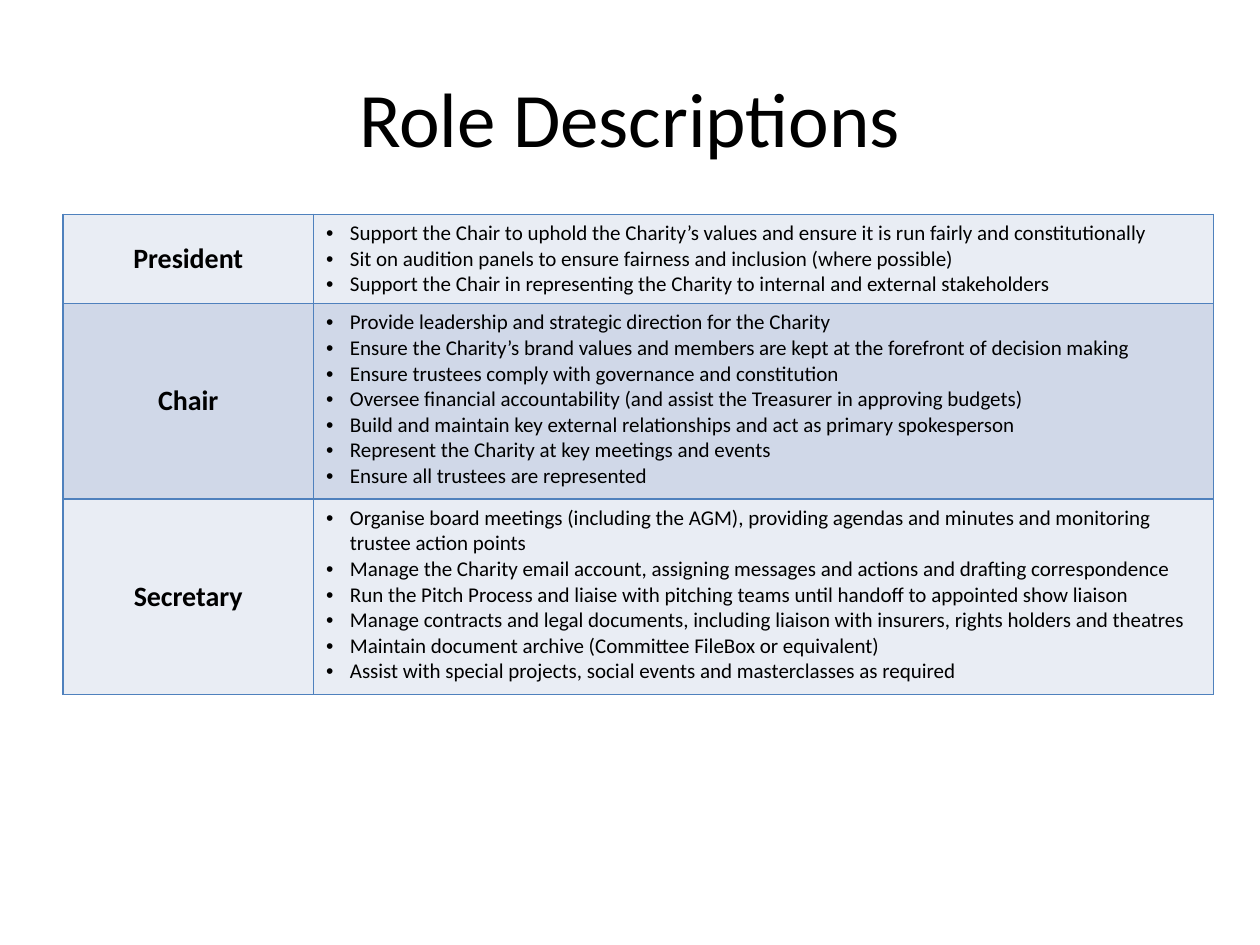
from lxml import etree
from pptx import Presentation
from pptx.dml.color import RGBColor
from pptx.enum.text import MSO_ANCHOR, PP_ALIGN
from pptx.oxml.ns import qn
from pptx.util import Cm, Pt

MIDDLE, TOP = MSO_ANCHOR.MIDDLE, MSO_ANCHOR.TOP
CENTER, LEFT = PP_ALIGN.CENTER, PP_ALIGN.LEFT

COLOURS = {
    "text": "000000",
    "border": "4F81BD",
    "light_band": "E9EDF4",
    "dark_band": "D0D8E8",
}
FORMATS = {
    "title": {"size": Pt(44), "bold": False},
    "role": {"size": Pt(16), "bold": True},
    "duty": {"size": Pt(12), "bold": False},
}
ROLES = [
    ("President", 1.8, [
        "Support the Chair to uphold the Charity’s values and ensure it is run fairly and constitutionally",
        "Sit on audition panels to ensure fairness and inclusion (where possible)",
        "Support the Chair in representing the Charity to internal and external stakeholders",
    ]),
    ("Chair", 3.94, [
        "Provide leadership and strategic direction for the Charity",
        "Ensure the Charity’s brand values and members are kept at the forefront of decision making",
        "Ensure trustees comply with governance and constitution",
        "Oversee financial accountability (and assist the Treasurer in approving budgets)",
        "Build and maintain key external relationships and act as primary spokesperson",
        "Represent the Charity at key meetings and events",
        "Ensure all trustees are represented",
    ]),
    ("Secretary", 3.94, [
        "Organise board meetings (including the AGM), providing agendas and minutes and monitoring "
        "trustee action points",
        "Manage the Charity email account, assigning messages and actions and drafting correspondence",
        "Run the Pitch Process and liaise with pitching teams until handoff to appointed show liaison",
        "Manage contracts and legal documents, including liaison with insurers, rights holders and theatres",
        "Maintain document archive (Committee FileBox or equivalent)",
        "Assist with special projects, social events and masterclasses as required",
    ]),
]


class SlideBuilder:
    """Holds the style and the current slide."""

    font_name = "Calibri"
    border_width = Pt(1)
    bullet_indent = Cm(0.48)

    def __init__(self, slide):
        self.slide = slide

    def add_lines(self, frame, lines, style, align, bulleted=False):
        for index, line in enumerate(lines):
            paragraph = frame.add_paragraph() if index else frame.paragraphs[0]
            paragraph.alignment = align
            run = paragraph.add_run()
            run.text = line
            run.font.name = self.font_name
            run.font.color.rgb = RGBColor.from_string(COLOURS["text"])
            for attribute, value in FORMATS[style].items():
                setattr(run.font, attribute, value)
            if bulleted:
                self.bullet(paragraph)

    def bullet(self, paragraph):
        properties = paragraph._p.get_or_add_pPr()
        properties.set("marL", str(self.bullet_indent))
        properties.set("indent", str(-self.bullet_indent))
        etree.SubElement(properties, qn("a:buFont"), typeface="Arial")
        etree.SubElement(properties, qn("a:buChar"), char="•")

    def title(self, text, left, top, width, height):
        frame = self.slide.shapes.add_textbox(left, top, width, height).text_frame
        frame.word_wrap = True
        frame.vertical_anchor = MIDDLE
        self.add_lines(frame, [text], "title", CENTER)

    def style_cell(self, cell, band, anchor):
        cell.vertical_anchor = anchor
        properties = cell._tc.get_or_add_tcPr()
        for side in ("lnL", "lnR", "lnT", "lnB"):
            line = etree.SubElement(properties, qn(f"a:{side}"), w=str(self.border_width))
            fill = etree.SubElement(line, qn("a:solidFill"))
            etree.SubElement(fill, qn("a:srgbClr"), val=COLOURS["border"])
        # The fill has to follow the borders in the cell properties
        cell.fill.solid()
        cell.fill.fore_color.rgb = RGBColor.from_string(COLOURS[band])

    def role_table(self, roles, left, top, column_widths):
        height = Cm(sum(row_height for _, row_height, _ in roles))
        table = self.slide.shapes.add_table(
            len(roles), len(column_widths), left, top, sum(column_widths), height
        ).table
        table.first_row = table.horz_banding = False
        for column, width in zip(table.columns, column_widths):
            column.width = width
        for index, (role, row_height, duties) in enumerate(roles):
            table.rows[index].height = Cm(row_height)
            band = "dark_band" if index % 2 else "light_band"
            role_cell, duties_cell = table.rows[index].cells
            self.style_cell(role_cell, band, MIDDLE)
            self.add_lines(role_cell.text_frame, [role], "role", CENTER)
            self.style_cell(duties_cell, band, TOP)
            self.add_lines(duties_cell.text_frame, duties, "duty", LEFT, bulleted=True)


def main():
    presentation = Presentation()
    presentation.slide_width = Cm(25.4)
    presentation.slide_height = Cm(19.05)
    builder = SlideBuilder(presentation.slides.add_slide(presentation.slide_layouts[6]))

    # Heading
    builder.title("Role Descriptions", Cm(1.27), Cm(0.76), Cm(22.86), Cm(3.18))

    # Roles and their duties
    builder.role_table(ROLES, Cm(1.27), Cm(4.32), [Cm(5.05), Cm(18.14)])

    presentation.save("out.pptx")


if __name__ == "__main__":
    main()
